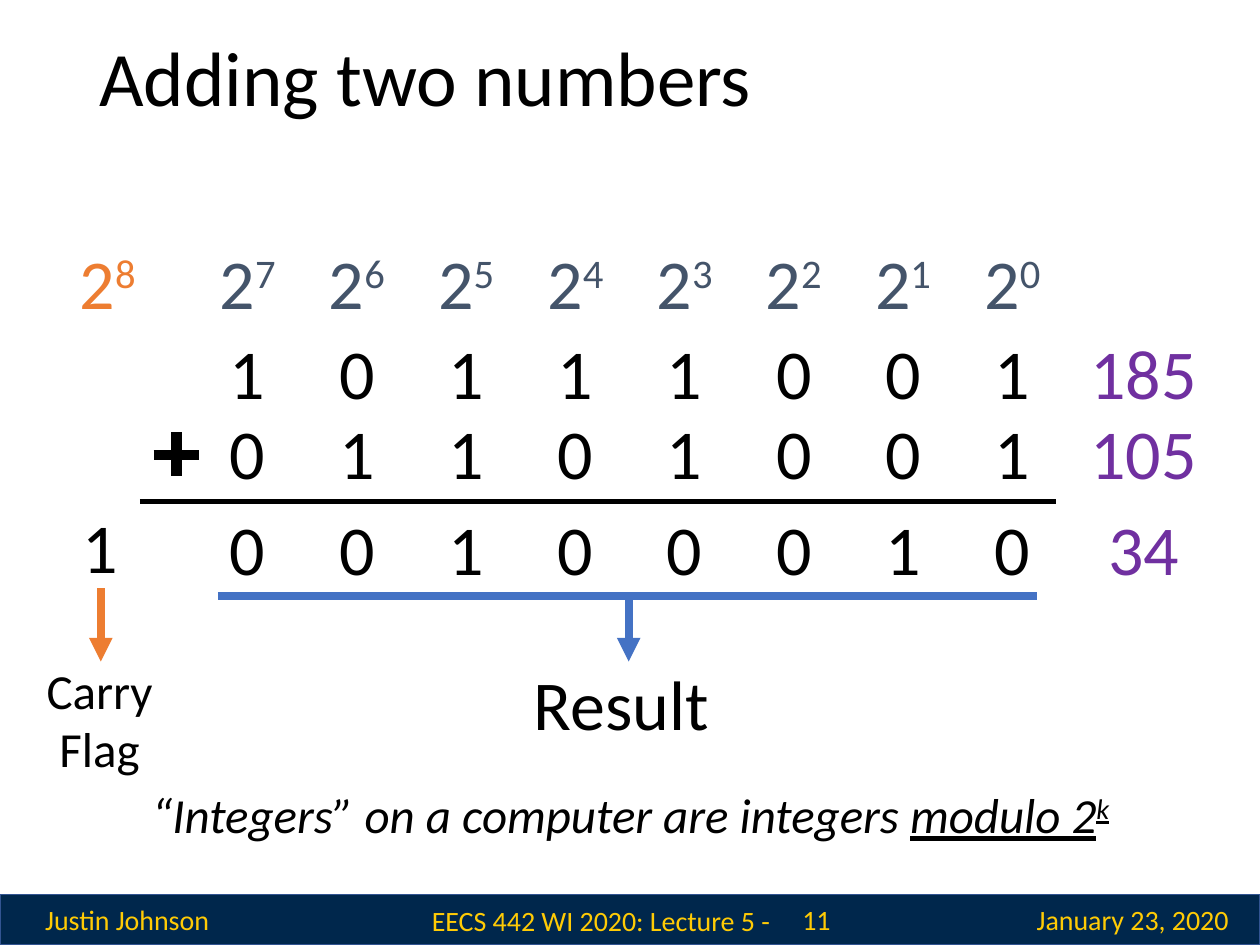
from lxml import etree
from pptx import Presentation
from pptx import util as u
from pptx.dml.color import RGBColor
from pptx.enum import shapes, text
from pptx.oxml.ns import qn

COLORS = {
    "black": "000000",
    "navy": "00274C",
    "navy_edge": "325491",
    "maize": "FFCB05",
    "slate": "44546A",
    "orange": "ED7D31",
    "blue": "4472C4",
    "purple": "7030A0",
}

presentation = Presentation()
presentation.slide_width = u.Inches(10)
presentation.slide_height = u.Inches(7.5)
slide = presentation.slides.add_slide(presentation.slide_layouts[6])


def add_text(box, paragraphs, size, color="black", align="CENTER", anchor="TOP"):
    shape = slide.shapes.add_textbox(*[u.Inches(length) for length in box])
    frame = shape.text_frame
    frame.word_wrap = True
    frame.vertical_anchor = getattr(text.MSO_ANCHOR, anchor)
    for index, runs in enumerate(paragraphs):
        paragraph = frame.add_paragraph() if index else frame.paragraphs[0]
        paragraph.alignment = getattr(text.PP_ALIGN, align)
        for words, styles in runs:
            run = paragraph.add_run()
            run.text = words
            run.font.name = "Calibri"
            run.font.size = u.Pt(size)
            run.font.color.rgb = RGBColor.from_string(COLORS[color])
            if "italic" in styles:
                run.font.italic = True
            if "underline" in styles:
                run.font.underline = True
            if "super" in styles:
                run.font._element.set("baseline", "30000")
    return shape


def add_line(start, end, color, width, arrow=False):
    ends = [u.Inches(length) for length in (*start, *end)]
    line = slide.shapes.add_connector(shapes.MSO_CONNECTOR.STRAIGHT, *ends)
    line.line.color.rgb = RGBColor.from_string(COLORS[color])
    line.line.width = u.Pt(width)
    if arrow:
        etree.SubElement(line.line._get_or_add_ln(), qn("a:tailEnd"), type="triangle")
    etree.SubElement(line._element.spPr, qn("a:effectLst"))


footer = slide.shapes.add_shape(
    shapes.MSO_SHAPE.RECTANGLE, u.Inches(0), u.Inches(7.1), u.Inches(10), u.Inches(0.4)
)
footer.shadow.inherit = False
footer.fill.solid()
footer.fill.fore_color.rgb = RGBColor.from_string(COLORS["navy"])
footer.line.color.rgb = RGBColor.from_string(COLORS["navy_edge"])
footer.line.width = u.Pt(1)

footer_texts = [
    ((0.01, 7.1, 2, 0.4), "Justin Johnson"),
    ((7.99, 7.11, 2, 0.37), "January 23, 2020"),
    ((3.3, 7.12, 2.99, 0.37), "EECS 442 WI 2020: Lecture 5 - "),
    ((6.04, 7.1, 0.88, 0.4), "11"),
]
for box, words in footer_texts:
    add_text(box, [[(words, "")]], 16, "maize", anchor="MIDDLE")

title = add_text(
    (0.69, 0.2, 8.62, 0.9), [[("Adding two numbers", "")]], 44, align="LEFT", anchor="MIDDLE"
)
title.text_frame.paragraphs[0].line_spacing = 0.9

modulo_note = [
    ("“Integers” on a computer are integers ", ["italic"]),
    ("modulo 2", ["italic", "underline"]),
    ("k", ["italic", "underline", "super"]),
]
add_text((0.13, 6.18, 9.75, 0.57), [modulo_note], 28)

add_line((1.11, 3.98), (8.38, 3.98), "black", 3)
add_line((1.22, 3.61), (1.58, 3.61), "black", 6)
add_line((1.4, 3.43), (1.4, 3.78), "black", 6)

add_text((0.17, 5.19, 1.24, 1.04), [[("Carry", "")], [("Flag", "")]], 28)
add_line((0.8, 4.67), (0.8, 5.25), "orange", 4.5, arrow=True)
add_text((2.55, 5.19, 4.76, 0.77), [[("Result", "")]], 40)
add_line((4.99, 4.75), (4.99, 5.25), "blue", 4.5, arrow=True)
add_line((1.73, 4.73), (8.23, 4.73), "blue", 4.5)

digit_width, row_height = 0.91, 0.77
column_lefts = [1.51 + 0.867 * column for column in range(8)]

powers = [(0.4, 8, "orange")]
powers += [(left, 7 - column, "slate") for column, left in enumerate(column_lefts)]
for left, power, color in powers:
    runs = [("2", ""), (str(power), ["super"])]
    add_text((left, 1.85, digit_width, row_height), [runs], 40, color)

number_rows = [
    (2.57, "10111001", "185"),
    (3.2, "01101001", "105"),
    (3.96, "00100010", "34"),
]
for top, bits, decimal in number_rows:
    for left, bit in zip(column_lefts, bits):
        add_text((left, top, digit_width, row_height), [[(bit, "")]], 40)
    add_text((8.49, top, 1.17, row_height), [[(decimal, "")]], 40, "purple")
add_text((0.34, 3.95, digit_width, row_height), [[("1", "")]], 40)

presentation.save("out.pptx")
